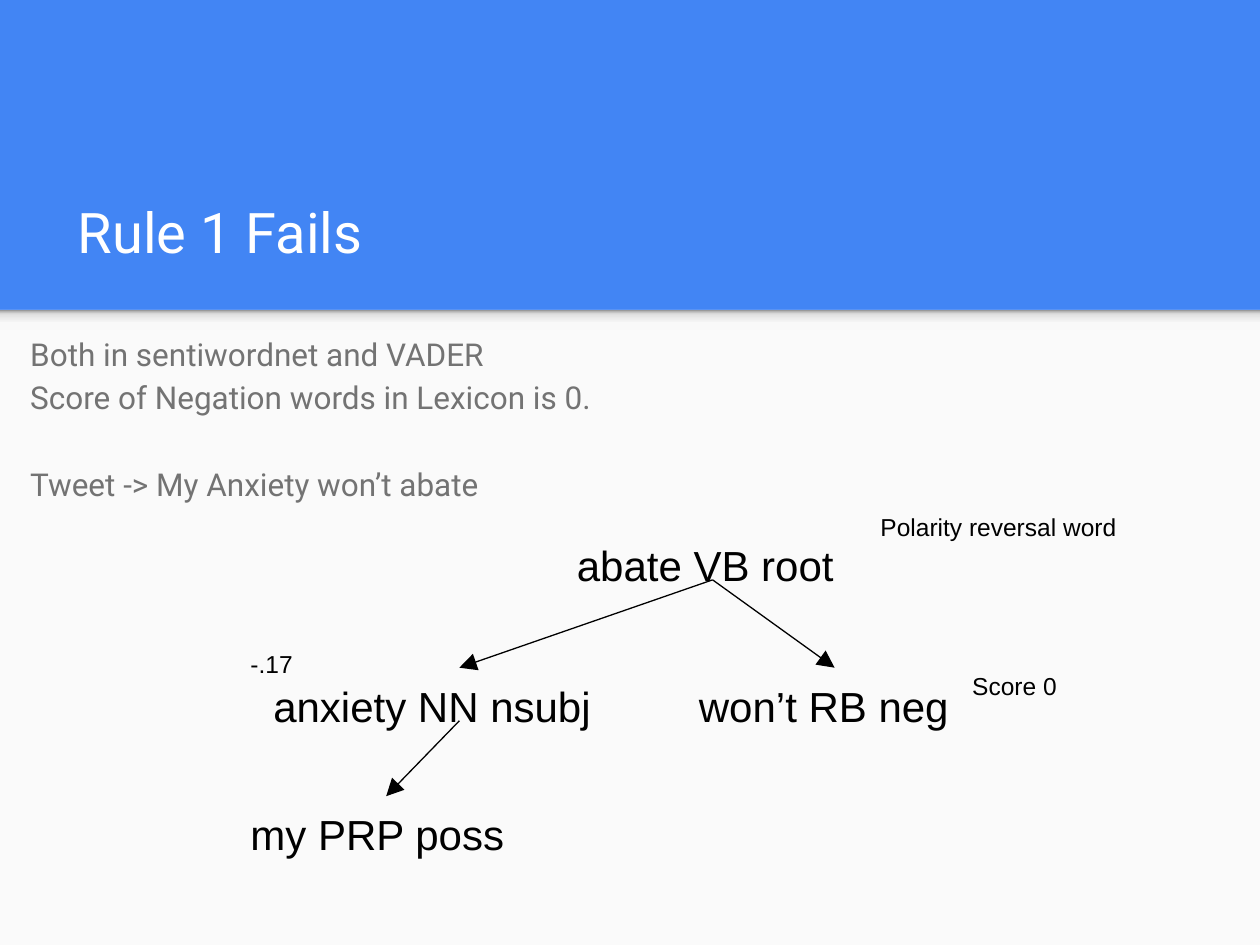
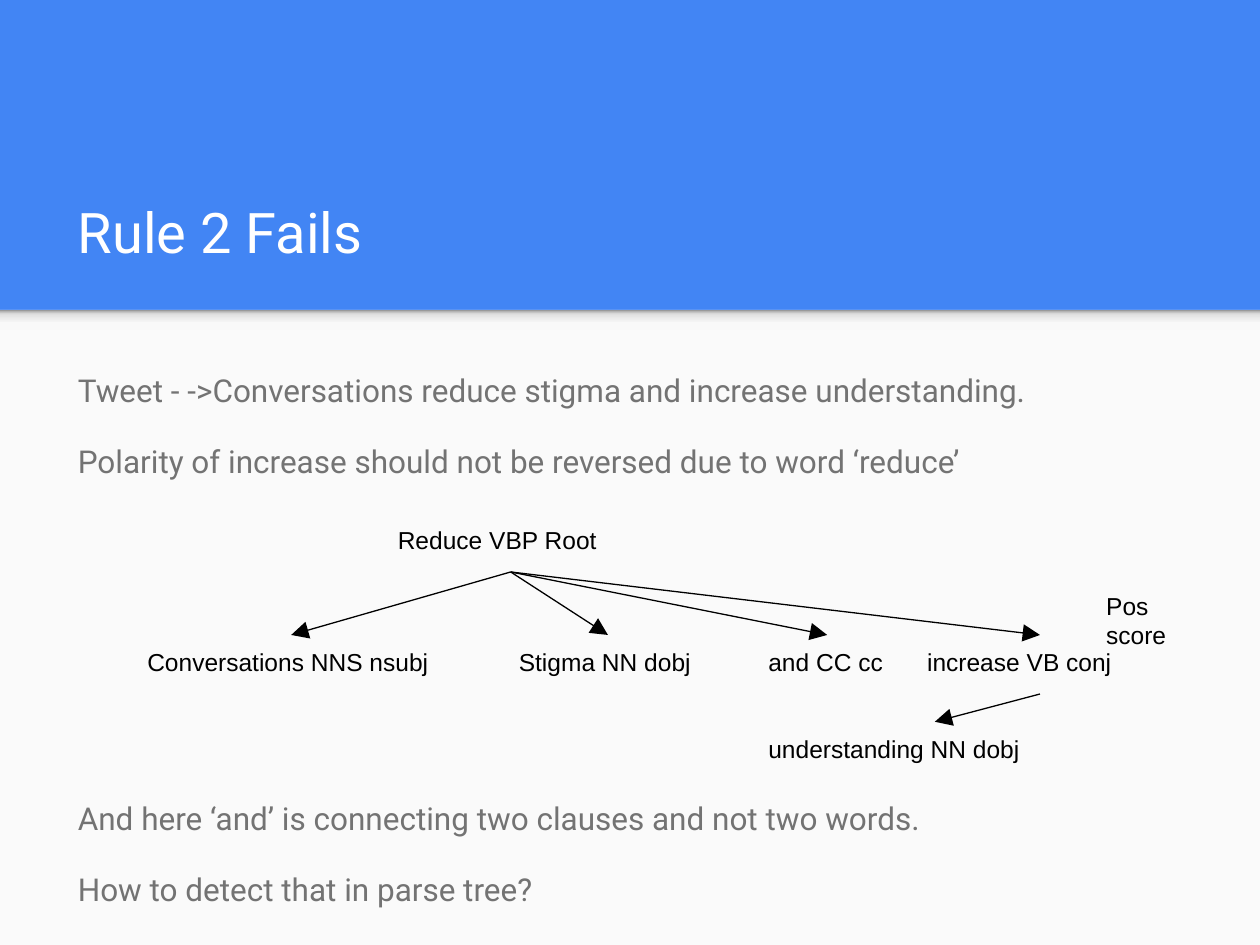
import pptx
import pptx.dml.color
import pptx.enum.shapes
import pptx.enum.text
import pptx.oxml.ns
import pptx.util
from lxml import etree

Cm = pptx.util.Cm
Pt = pptx.util.Pt
qn = pptx.oxml.ns.qn
RGB = pptx.dml.color.RGBColor

BLUE = RGB(0x42, 0x85, 0xF4)
PALE = RGB(0xFA, 0xFA, 0xFA)
WHITE = RGB(0xFF, 0xFF, 0xFF)
GREY = RGB(0x73, 0x73, 0x73)
BLACK = RGB(0, 0, 0)
SHADE = [(0, "F9F9F9"), (36, "F9F9F9"), (80, "DEDEDE"), (100, "999999")]

WIDE, HIGH, BAND = 25.4, 19.05, 6.25  # slide size and foot of the title band


class Deck:
    """Holds the shared style and the slide being built."""

    def __init__(self):
        self.show = pptx.Presentation()
        self.show.slide_width = Cm(WIDE)
        self.show.slide_height = Cm(HIGH)
        self.slide = None

    def page(self, title):
        """Start a slide with its band, shade and title."""
        self.slide = self.show.slides.add_slide(self.show.slide_layouts[6])
        back = self.slide.background.fill
        back.solid()
        back.fore_color.rgb = BLUE
        panel = self.rect(BAND, HIGH - BAND)
        panel.fill.solid()
        panel.fill.fore_color.rgb = PALE
        self.fade(self.rect(BAND, 0.41))
        box = self.text(1.32, 2.74, 22.83, 2.84, [title], 32, WHITE, "Roboto")
        box.text_frame.vertical_anchor = pptx.enum.text.MSO_ANCHOR.BOTTOM

    def rect(self, top, high):
        """Add a plain bar across the slide."""
        kind = pptx.enum.shapes.MSO_SHAPE.RECTANGLE
        bar = self.slide.shapes.add_shape(kind, 0, Cm(top), Cm(WIDE), Cm(high))
        bar.shadow.inherit = False
        bar.line.fill.background()
        return bar

    def fade(self, bar):
        """Fill a bar with the shade that falls below the band."""
        bar.fill.gradient()
        bar.fill.gradient_angle = 90
        stops = bar._element.spPr.find(qn("a:gradFill")).find(qn("a:gsLst"))
        for stop in list(stops):
            stops.remove(stop)
        for place, tone in SHADE:
            stop = etree.SubElement(stops, qn("a:gs"), pos=str(place * 1000))
            etree.SubElement(stop, qn("a:srgbClr"), val=tone)

    def text(self, left, top, wide, high, lines, size, tone, face):
        """Add a text box with one paragraph for each line."""
        box = self.slide.shapes.add_textbox(Cm(left), Cm(top), Cm(wide), Cm(high))
        frame = box.text_frame
        frame.word_wrap = True
        frame.margin_left = frame.margin_right = Cm(0.25)
        frame.margin_top = frame.margin_bottom = Cm(0.25)
        for num, line in enumerate(lines):
            para = frame.paragraphs[0] if num == 0 else frame.add_paragraph()
            para.text = line
            para.font.size = Pt(size)
            para.font.name = face
            para.font.color.rgb = tone
        return box

    def body(self, left, top, lines):
        """Add grey body text; its paragraphs are returned for spacing."""
        box = self.text(left, top, 22.83, 10.03, lines, 18, GREY, "Roboto")
        paras = box.text_frame.paragraphs
        for para in paras:
            para.line_spacing = 1.15
        return paras

    def node(self, left, top, wide, high, word, size=14):
        """Add a word of the parse tree, or a note beside it."""
        return self.text(left, top, wide, high, [word], size, BLACK, "Arial")

    def arrow(self, head, child):
        """Draw an arrow from the foot of one node to the top of another."""
        line = self.slide.shapes.add_connector(
            pptx.enum.shapes.MSO_CONNECTOR.STRAIGHT,
            head.left + head.width // 2, head.top + head.height,
            child.left + child.width // 2, child.top)
        line.line.color.rgb = BLACK
        line.line.width = Pt(0.75)
        etree.SubElement(line.line._get_or_add_ln(), qn("a:tailEnd"),
                         type="triangle", w="lg", len="lg")
        etree.SubElement(line._element.spPr, qn("a:effectLst"))


def first(deck):
    deck.page("Rule 1 Fails")
    paras = deck.body(0.36, 6.5, [
        "Both in sentiwordnet and VADER",
        "Score of Negation words in Lexicon is 0.",
        "Tweet -> My Anxiety won’t abate"])
    paras[0].line_spacing = 1.0
    paras[2].space_before = Pt(25)

    # Parse tree
    root = deck.node(11.38, 10.62, 5.97, 1.07, "abate VB root", 24)
    noun = deck.node(5.26, 13.46, 8, 1.07, "anxiety NN nsubj", 24)
    verb = deck.node(13.84, 13.46, 5.97, 1.07, "won’t RB neg", 24)
    leaf = deck.node(4.8, 16.05, 5.97, 1.07, "my PRP poss", 24)
    for head, child in [(root, noun), (noun, leaf), (root, verb)]:
        deck.arrow(head, child)

    # Notes on the scores
    deck.node(4.8, 12.83, 1.47, 0.64, "-.17")
    deck.node(19.35, 13.28, 2.41, 0.64, "Score 0")
    deck.node(17.5, 10.08, 5.46, 1.32, "Polarity reversal word")


def second(deck):
    deck.page("Rule 2 Fails")
    paras = deck.body(1.32, 7.11, [
        "Tweet - ->Conversations reduce stigma and increase understanding.",
        "Polarity of increase should not be reversed due to word ‘reduce’",
        "And here ‘and’ is connecting two clauses and not two words.",
        "How to detect that in parse tree?"])
    for para in paras:
        para.space_after = Pt(16)
    paras[2].space_before = Pt(163)  # room for the tree

    # Parse tree
    high = 1.19
    root = deck.node(7.77, 10.34, 5.05, high, "Reduce VBP Root")
    row = [(2.72, 6.3, "Conversations NNS nsubj"),
           (10.21, 4.09, "Stigma NN dobj"),
           (15.24, 2.87, "and CC cc"),
           (18.44, 5.05, "increase VB conj")]
    for left, wide, word in row:
        child = deck.node(left, 12.8, wide, high, word)
        deck.arrow(root, child)
    leaf = deck.node(15.24, 14.55, 7.21, high, "understanding NN dobj")
    deck.arrow(child, leaf)
    deck.node(22.05, 11.66, 2.11, 1.27, "Pos score")


def main():
    deck = Deck()
    first(deck)
    second(deck)
    deck.show.save("out.pptx")


if __name__ == "__main__":
    main()
